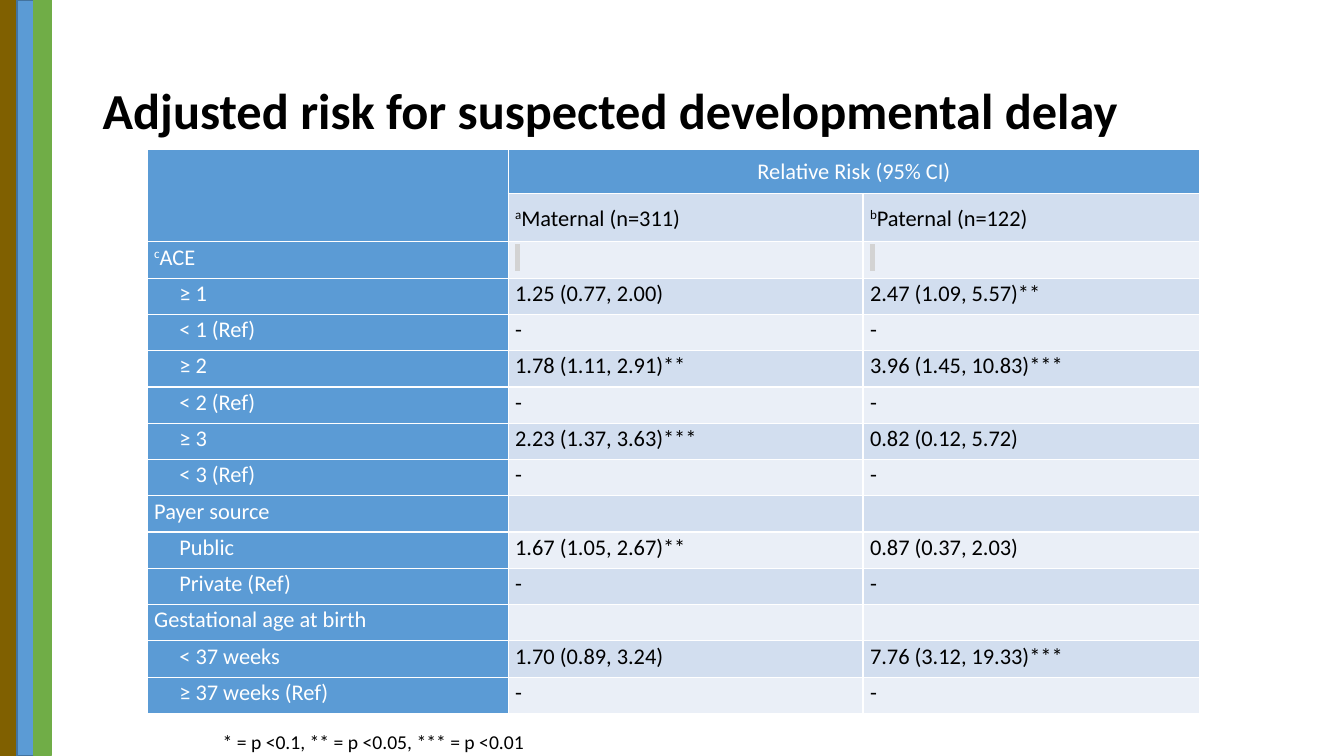
"""Builds a slide with a table of adjusted risks for suspected developmental delay."""
from lxml.etree import SubElement
from pptx import Presentation
from pptx.dml.color import RGBColor
from pptx.enum.shapes import MSO_SHAPE
from pptx.enum.text import MSO_ANCHOR, PP_ALIGN
from pptx.oxml import parse_xml
from pptx.oxml.ns import nsdecls, qn
from pptx.util import Inches, Pt

TITLE = "Adjusted risk for suspected developmental delay"
FOOTNOTE = "* = p <0.1, ** = p <0.05, *** = p <0.01"
SPANNER = "Relative Risk (95% CI)"
GROUPS = [("a", "Maternal (n=311)"), ("b", "Paternal (n=122)")]
SECTIONS = [
    ("c", "ACE", [
        ("≥ 1", "1.25 (0.77, 2.00)", "2.47 (1.09, 5.57)**"),
        ("< 1 (Ref)", "-", "-"),
        ("≥ 2", "1.78 (1.11, 2.91)**", "3.96 (1.45, 10.83)***"),
        ("< 2 (Ref)", "-", "-"),
        ("≥ 3", "2.23 (1.37, 3.63)***", "0.82 (0.12, 5.72)"),
        ("< 3 (Ref)", "-", "-"),
    ]),
    ("", "Payer source", [
        ("Public", "1.67 (1.05, 2.67)**", "0.87 (0.37, 2.03)"),
        ("Private (Ref)", "-", "-"),
    ]),
    ("", "Gestational age at birth", [
        ("< 37 weeks", "1.70 (0.89, 3.24)", "7.76 (3.12, 19.33)***"),
        ("≥ 37 weeks (Ref)", "-", "-"),
    ]),
]
STRIPES = [(0, 0, "806000", "806000"), (0.17, 0, "5B9BD5", "43739E"),
           (0.33, -0.01, "70AD47", "70AD47")]
COLUMNS = [3.58, 3.52, 3.34]
HEADER_ROWS = [0.44, 0.48]
BODY_ROW = 0.36
PAD, INDENT = 0.07, 0.25
THEME = {
    "font": "Calibri", "dark": "000000", "light": "FFFFFF", "header": "5B9BD5",
    "bands": ["EAEFF7", "D2DEEF"], "mark": "D3D3D3",
    "title": 36, "cell": 16, "note": 14, "rule": 1,
}


def rgb(code):
    return RGBColor.from_string(code)


def add_run(p, text, size, color, bold=False, raised=False):
    r = p.add_run()
    r.text = text
    r.font.name, r.font.size, r.font.bold = THEME["font"], Pt(size), bold
    r.font.color.rgb = rgb(color)
    if raised:
        r.font._element.set("baseline", "30000")
    return r


def add_text(slide, box, text, size, bold=False, anchor=MSO_ANCHOR.TOP):
    tf = slide.shapes.add_textbox(*map(Inches, box)).text_frame
    tf.word_wrap, tf.vertical_anchor = True, anchor
    add_run(tf.paragraphs[0], text, size, THEME["dark"], bold)
    return tf.paragraphs[0]


def style_cell(cell, fill):
    cell.fill.solid()
    cell.fill.fore_color.rgb = rgb(fill)
    cell.margin_left = cell.margin_right = Inches(PAD)
    cell.margin_top = cell.margin_bottom = 0
    tc_pr = cell._tc.get_or_add_tcPr()
    for i, side in enumerate(("lnL", "lnR", "lnT", "lnB")):
        tc_pr.insert(i, parse_xml(
            f'<a:{side} {nsdecls("a")} w="{Pt(THEME["rule"])}"><a:solidFill>'
            f'<a:srgbClr val="{THEME["light"]}"/></a:solidFill></a:{side}>'))


def write_cell(cell, text, color, note="", indent=0):
    cell.margin_left = Inches(PAD + indent)
    p = cell.text_frame.paragraphs[0]
    p.line_spacing = 1.07
    if note:
        add_run(p, note, THEME["cell"], color, raised=True)
    return p, add_run(p, text, THEME["cell"], color)


def mark_blank(cell):
    p, r = write_cell(cell, " ", THEME["dark"])
    highlight = parse_xml(f'<a:highlight {nsdecls("a")}/>')
    SubElement(highlight, qn("a:srgbClr")).set("val", THEME["mark"])
    r.font._element.find(qn("a:solidFill")).addnext(highlight)


def add_risk_table(slide):
    heights = HEADER_ROWS + [BODY_ROW] * sum(1 + len(rows) for _, _, rows in SECTIONS)
    frame = slide.shapes.add_table(len(heights), len(COLUMNS), Inches(1.46), Inches(1.48),
                                   Inches(sum(COLUMNS)), Inches(sum(heights)))
    table = frame.table
    table.first_row = table.horz_banding = False
    for column, width in zip(table.columns, COLUMNS):
        column.width = Inches(width)
    for i, height in enumerate(heights):
        table.rows[i].height = Inches(height)
        for j in range(len(COLUMNS)):
            is_header = i == 0 or j == 0
            style_cell(table.cell(i, j), THEME["header"] if is_header else THEME["bands"][i % 2])

    table.cell(0, 0).merge(table.cell(1, 0))
    table.cell(0, 1).merge(table.cell(0, 2))
    p, r = write_cell(table.cell(0, 1), SPANNER, THEME["light"])
    p.alignment = PP_ALIGN.CENTER
    table.cell(0, 1).vertical_anchor = MSO_ANCHOR.MIDDLE
    for j, (note, group) in enumerate(GROUPS, 1):
        write_cell(table.cell(1, j), group, THEME["dark"], note)
        table.cell(1, j).vertical_anchor = MSO_ANCHOR.MIDDLE

    i = len(HEADER_ROWS)
    for j in range(1, len(COLUMNS)):
        mark_blank(table.cell(i, j))
    for note, section, rows in SECTIONS:
        write_cell(table.cell(i, 0), section, THEME["light"], note)
        for i, (level, *risks) in enumerate(rows, i + 1):
            write_cell(table.cell(i, 0), level, THEME["light"], indent=INDENT)
            for j, risk in enumerate(risks, 1):
                write_cell(table.cell(i, j), risk, THEME["dark"])
        i += 1


def main():
    prs = Presentation()
    prs.slide_width, prs.slide_height = Inches(13.33), Inches(7.5)
    slide = prs.slides.add_slide(prs.slide_layouts[6])
    title = add_text(slide, (0.92, 0.4, 11.5, 1.45), TITLE, THEME["title"], True, MSO_ANCHOR.MIDDLE)
    title.line_spacing = 0.9
    add_risk_table(slide)
    for left, top, fill, line in STRIPES:
        sp = slide.shapes.add_shape(MSO_SHAPE.RECTANGLE, Inches(left), Inches(top),
                                    Inches(0.18), Inches(7.5))
        sp.shadow.inherit = False
        sp.fill.solid()
        sp.fill.fore_color.rgb = rgb(fill)
        sp.line.color.rgb = rgb(line)
        sp.line.width = Pt(THEME["rule"])
    add_text(slide, (2.11, 7.19, 6.27, 0.34), FOOTNOTE, THEME["note"])
    prs.save("out.pptx")


if __name__ == "__main__":
    main()
